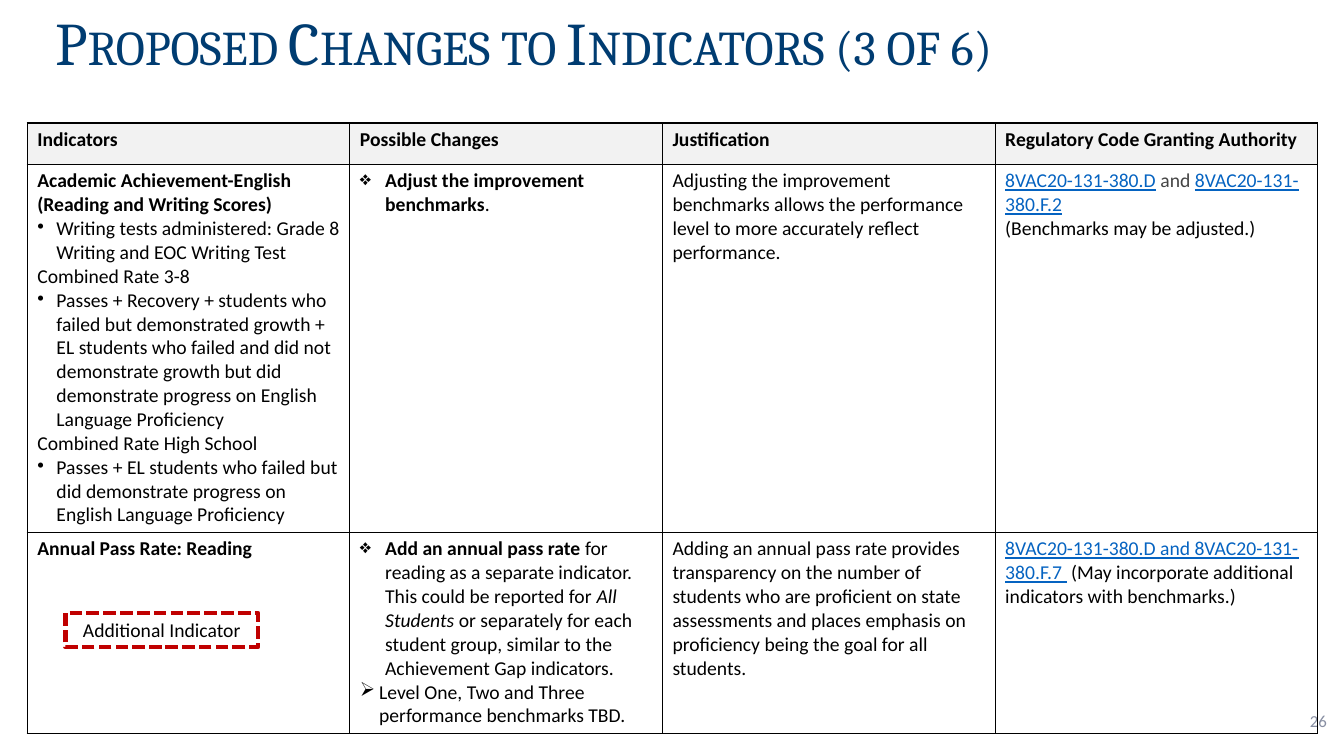
from dataclasses import dataclass

from lxml import etree
from pptx import Presentation, util as u
from pptx.dml.color import RGBColor
from pptx.enum import dml, shapes, text
from pptx.oxml import ns

SCALE = 9144
FONT = "Calibri"
HUES = {
    "title": "003C71",
    "black": "000000",
    "link": "0563C1",
    "grey": "444444",
    "page": "888FA3",
    "head": "F2F2F2",
    "alert": "C00000",
}


@dataclass(frozen=True)
class Run:
    words: str
    bold: bool = False
    slant: bool = False
    line: bool = False
    hue: str = "black"


@dataclass(frozen=True)
class Para:
    runs: tuple[Run, ...]
    mark: str = ""
    dent: int = 0


def plain(words: str, bold: bool = False) -> Para:
    return Para((Run(words, bold),))


def point(words: str, mark: str = "•") -> Para:
    return Para((Run(words),), mark, 19)


def link(words: str) -> Run:
    return Run(words, line=True, hue="link")


WIDTHS = (320, 310, 330, 320)
HEIGHTS = (41, 365, 200)
HEADS = ("Indicators", "Possible Changes", "Justification", "Regulatory Code Granting Authority")
ROWS = (
    tuple((plain(head, True),) for head in HEADS),
    (
        (
            plain("Academic Achievement-English (Reading and Writing Scores)", True),
            point("Writing tests administered: Grade 8 Writing and EOC Writing Test"),
            plain("Combined Rate 3-8"),
            point("Passes + Recovery + students who failed but demonstrated growth + "
                  "EL students who failed and did not demonstrate growth but did "
                  "demonstrate progress on English Language Proficiency"),
            plain("Combined Rate High School"),
            point("Passes + EL students who failed but did demonstrate progress on "
                  "English Language Proficiency"),
        ),
        (Para((Run("Adjust the improvement benchmarks", True), Run(".")), "❖", 25),),
        (
            plain("Adjusting the improvement"),
            plain("benchmarks allows the performance"),
            plain("level to more accurately reflect"),
            plain("performance."),
        ),
        (
            Para((link("8VAC20-131-380.D"), Run(" and ", hue="grey"), link("8VAC20-131-380.F.2"))),
            plain("(Benchmarks may be adjusted.)"),
        ),
    ),
    (
        (plain("Annual Pass Rate: Reading", True),),
        (
            Para((
                Run("Add an annual pass rate ", True),
                Run("for reading as a separate indicator. This could be reported for "),
                Run("All Students", slant=True),
                Run(" or separately for each student group, similar to the "
                    "Achievement Gap indicators."),
            ), "❖", 25),
            point("Level One, Two and Three performance benchmarks TBD.", "➢"),
        ),
        (plain("Adding an annual pass rate provides transparency on the number of "
               "students who are proficient on state assessments and places emphasis "
               "on proficiency being the goal for all students."),),
        (Para((
            link("8VAC20-131-380.D and 8VAC20-131-380.F.7 "),
            Run(" (May incorporate additional indicators with benchmarks.)"),
        )),),
    ),
)


def px(size: int) -> u.Emu:
    return u.Emu(size * SCALE)


def tint(hue: str) -> RGBColor:
    return RGBColor.from_string(HUES[hue])


def set_font(font, size: float, hue: str, face: str = FONT) -> None:
    font.name, font.size, font.color.rgb = face, u.Pt(size), tint(hue)


def add_mark(line, mark: str, dent: int) -> None:
    props = line._p.get_or_add_pPr()
    props.set("marL", str(px(dent)))
    props.set("indent", str(px(-dent)))
    shade = etree.SubElement(props, ns.qn("a:buClr"))
    etree.SubElement(shade, ns.qn("a:srgbClr"), val=HUES["black"])
    etree.SubElement(props, ns.qn("a:buChar"), char=mark)


def fill_text(frame, paras: tuple[Para, ...]) -> None:
    for i, para in enumerate(paras):
        line = frame.add_paragraph() if i else frame.paragraphs[0]
        if para.mark:
            add_mark(line, para.mark, para.dent)
        set_font(line.font, 14, "black")
        bolds = {part.bold for part in para.runs}
        if len(bolds) == 1:
            line.font.bold = para.runs[0].bold
        for part in para.runs:
            run = line.add_run()
            run.text = part.words
            if len(bolds) > 1:
                run.font.bold = part.bold
            if part.slant:
                run.font.italic = True
            if part.line:
                run.font.underline = True
            if part.hue != "black":
                run.font.color.rgb = tint(part.hue)


def add_edges(cell) -> None:
    props = cell._tc.get_or_add_tcPr()
    for i, side in enumerate(("lnL", "lnR", "lnT", "lnB")):
        edge = etree.Element(ns.qn(f"a:{side}"), w=str(u.Pt(1)))
        fill = etree.SubElement(edge, ns.qn("a:solidFill"))
        etree.SubElement(fill, ns.qn("a:srgbClr"), val=HUES["black"])
        props.insert(i, edge)


def add_title(slide) -> None:
    title = slide.shapes.title
    title.left, title.top, title.width, title.height = px(-35), px(-20), px(1333), px(103)
    frame = title.text_frame
    frame.text = "Proposed Changes to Indicators (3 of 6)"
    frame.auto_size = text.MSO_AUTO_SIZE.NONE
    frame.vertical_anchor = text.MSO_ANCHOR.BOTTOM
    frame.margin_left = px(90)
    line = frame.paragraphs[0]
    line.alignment = text.PP_ALIGN.LEFT
    line.line_spacing = 0.9
    set_font(line.font, 43.2, "title", "Cambria")
    line._p.pPr.find(ns.qn("a:defRPr")).set("cap", "small")


def add_page(slide) -> None:
    frame = slide.shapes.add_textbox(px(1026), px(695), px(300), px(40)).text_frame
    frame.word_wrap = True
    frame.vertical_anchor = text.MSO_ANCHOR.MIDDLE
    frame.text = "26"
    line = frame.paragraphs[0]
    line.alignment = text.PP_ALIGN.RIGHT
    set_font(line.font, 12, "page")


def add_grid(slide) -> None:
    grid = slide.shapes.add_table(len(ROWS), len(WIDTHS), px(27), px(122),
                                  px(sum(WIDTHS)), px(sum(HEIGHTS))).table
    grid.first_row = grid.horz_banding = False
    for col, width in zip(grid.columns, WIDTHS):
        col.width = px(width)
    for i, (row, height) in enumerate(zip(grid.rows, HEIGHTS)):
        row.height = px(height)
        for cell, paras in zip(row.cells, ROWS[i]):
            if i:
                cell.fill.background()
            else:
                cell.fill.solid()
                cell.fill.fore_color.rgb = tint("head")
            add_edges(cell)
            fill_text(cell.text_frame, paras)


def add_label(slide) -> None:
    box = slide.shapes.add_shape(shapes.MSO_SHAPE.RECTANGLE, px(65), px(608), px(191), px(34))
    box.shadow.inherit = False
    box.fill.background()
    box.line.color.rgb = tint("alert")
    box.line.width = u.Pt(3)
    box.line.dash_style = dml.MSO_LINE.SQUARE_DOT
    fill_text(box.text_frame, (plain("Additional Indicator"),))
    box.text_frame.paragraphs[0].alignment = text.PP_ALIGN.CENTER


def main() -> None:
    deck = Presentation()
    deck.slide_width, deck.slide_height = px(1333), px(750)
    slide = deck.slides.add_slide(deck.slide_layouts[5])
    add_title(slide)
    add_page(slide)
    add_grid(slide)
    add_label(slide)
    deck.save("out.pptx")


if __name__ == "__main__":
    main()
